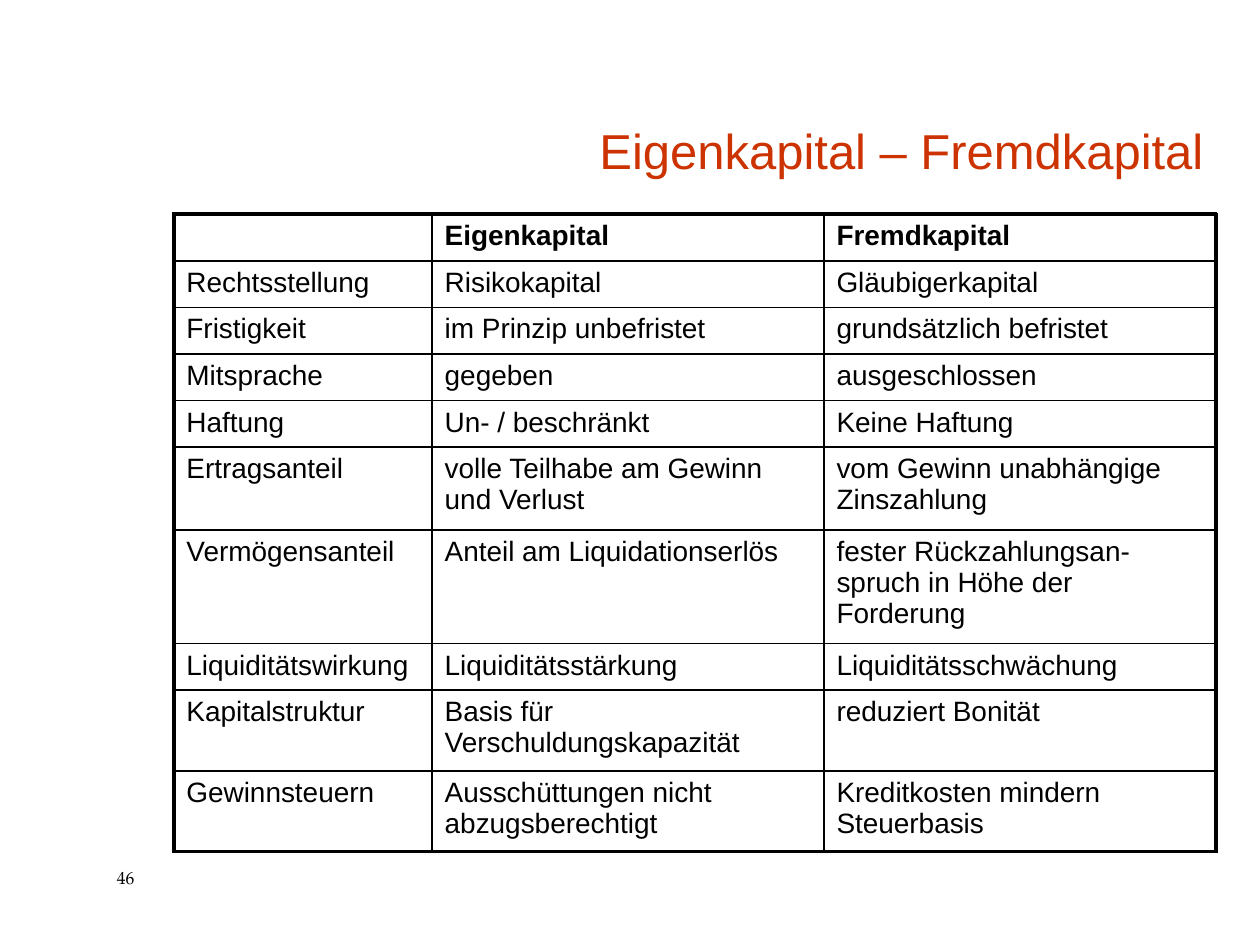
from lxml import etree
from pptx import Presentation
from pptx.dml.color import RGBColor
from pptx.enum import text
from pptx.oxml import ns
from pptx.util import Inches, Pt

BLACK = RGBColor(0x00, 0x00, 0x00)
RED = RGBColor(0xCC, 0x33, 0x00)

THIN, THICK = 1, 2.25
COLUMN_WIDTHS = [2.05, 3.11, 3.11]
ROW_HEIGHTS = [0.37] * 5 + [0.66, 0.9, 0.37, 0.64, 0.64]
COMPARISON = [
    ("", "Eigenkapital", "Fremdkapital"),
    ("Rechtsstellung", "Risikokapital", "Gläubigerkapital"),
    ("Fristigkeit", "im Prinzip unbefristet", "grundsätzlich befristet"),
    ("Mitsprache", "gegeben", "ausgeschlossen"),
    ("Haftung", "Un- / beschränkt", "Keine Haftung"),
    ("Ertragsanteil", "volle Teilhabe am Gewinn und Verlust",
     "vom Gewinn unabhängige Zinszahlung"),
    ("Vermögensanteil", "Anteil am Liquidationserlös",
     "fester Rückzahlungsan-spruch in Höhe der Forderung"),
    ("Liquiditätswirkung", "Liquiditätsstärkung", "Liquiditätsschwächung"),
    ("Kapitalstruktur", "Basis für Verschuldungskapazität", "reduziert Bonität"),
    ("Gewinnsteuern", "Ausschüttungen nicht abzugsberechtigt",
     "Kreditkosten mindern Steuerbasis"),
]


def write(frame, words, size=16, font="Arial", color=BLACK, bold=False,
          align=text.PP_ALIGN.LEFT):
    paragraph = frame.paragraphs[0]
    paragraph.alignment = align
    run = paragraph.add_run()
    run.text = words
    run.font.size = Pt(size)
    run.font.name = font
    run.font.bold = bold
    run.font.color.rgb = color


def add_title(slide, words):
    title = slide.shapes.title
    title.left, title.top = Inches(2.09), Inches(0.42)
    title.width, title.height = Inches(7.56), Inches(1.05)
    title.text_frame.vertical_anchor = text.MSO_ANCHOR.BOTTOM
    write(title.text_frame, words, size=28, color=RED, align=text.PP_ALIGN.RIGHT)


def add_page_number(slide, number):
    box = slide.shapes.add_textbox(Inches(0.83), Inches(6.83), Inches(0.67), Inches(0.27))
    box.text_frame.word_wrap = True
    write(box.text_frame, number, size=10, font="TeX Gyre Pagella")


def set_borders(cell, widths):
    properties = cell._tc.get_or_add_tcPr()
    for side, width in widths.items():
        line = etree.SubElement(properties, ns.qn(f"a:ln{side}"), w=str(Pt(width)))
        fill = etree.SubElement(line, ns.qn("a:solidFill"))
        etree.SubElement(fill, ns.qn("a:srgbClr"), val=str(BLACK))


def add_comparison(slide, entries):
    rows, columns = len(entries), len(entries[0])
    table = slide.shapes.add_table(
        rows, columns, Inches(1.38), Inches(1.7),
        Inches(sum(COLUMN_WIDTHS)), Inches(sum(ROW_HEIGHTS))).table
    table.first_row = table.horz_banding = False
    for column, width in zip(table.columns, COLUMN_WIDTHS):
        column.width = Inches(width)
    for r, (entry, height) in enumerate(zip(entries, ROW_HEIGHTS)):
        table.rows[r].height = Inches(height)
        for c, words in enumerate(entry):
            cell = table.cell(r, c)
            set_borders(cell, {
                "L": THICK if c == 0 else THIN,
                "R": THICK if c == columns - 1 else THIN,
                "T": THICK if r == 0 else THIN,
                "B": THICK if r == rows - 1 else THIN,
            })
            cell.fill.background()
            if words:
                write(cell.text_frame, words, bold=r == 0)
            else:
                cell.margin_top = cell.margin_bottom = 0


def main():
    deck = Presentation()
    deck.slide_width, deck.slide_height = Inches(10), Inches(7.5)
    slide = deck.slides.add_slide(deck.slide_layouts[5])
    add_page_number(slide, "46")
    add_title(slide, "Eigenkapital – Fremdkapital")
    add_comparison(slide, COMPARISON)
    deck.save("out.pptx")


if __name__ == "__main__":
    main()
